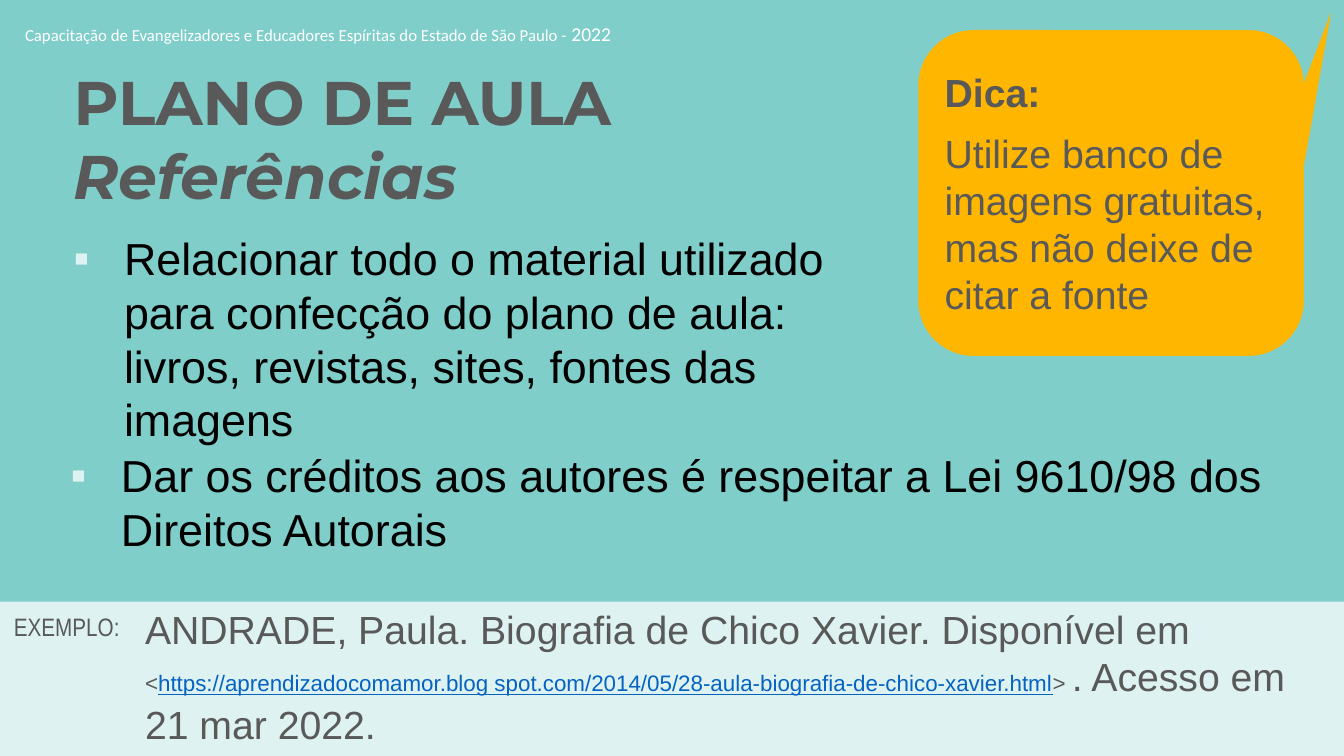
from lxml import etree
from pptx import Presentation
from pptx import util as u
from pptx.dml import color
from pptx.enum import shapes, text
from pptx.oxml import ns

TEAL, MINT, AMBER = "80CECA", "DEF2F1", "FFB600"
GRAY, BLACK, WHITE, LINK = "595959", "000000", "FFFFFF", "0563C1"


def rgb(value):
    return color.RGBColor.from_string(value)


class Slide:
    """Holds the style and the current slide."""

    def __init__(self, deck, layout, background):
        self.page = deck.slides.add_slide(deck.slide_layouts[layout])
        self.page.background.fill.solid()
        self.page.background.fill.fore_color.rgb = rgb(background)

    def place(self, box, left, top, width, height):
        box.left, box.top = u.Inches(left), u.Inches(top)
        box.width, box.height = u.Inches(width), u.Inches(height)

    def fill_text(self, box, paras, anchor=text.MSO_ANCHOR.TOP, wrap=True, gap=0):
        """Each paragraph is a list of (words, size, font, colour, styles)."""
        frame = box.text_frame
        frame.word_wrap = wrap
        frame.auto_size = text.MSO_AUTO_SIZE.NONE
        frame.vertical_anchor = anchor
        for number, spans in enumerate(paras):
            para = frame.add_paragraph() if number else frame.paragraphs[0]
            para.alignment = text.PP_ALIGN.LEFT
            para.space_before = u.Pt(gap if number else 0)
            for words, size, font, shade, styles in spans:
                span = para.add_run()
                span.text = words
                span.font.size = u.Pt(size)
                span.font.name = font
                span.font.color.rgb = rgb(shade)
                span.font.bold = "b" in styles
                span.font.italic = "i" in styles
                span.font.underline = "u" in styles

    def label(self, area, paras, **options):
        box = self.page.shapes.add_textbox(0, 0, 0, 0)
        self.place(box, *area)
        self.fill_text(box, paras, **options)

    def title(self, area, paras):
        box = self.page.shapes.title
        self.place(box, *area)
        self.fill_text(box, paras, anchor=text.MSO_ANCHOR.MIDDLE)

    def bullet(self, index, area, words):
        box = self.page.placeholders[index]
        self.place(box, *area)
        self.fill_text(box, [[(words, 32, "Arial", BLACK, "")]])
        props = box.text_frame.paragraphs[0]._p.get_or_add_pPr()
        props.set("marL", str(u.Inches(0.5)))
        props.set("indent", str(-u.Inches(0.5)))
        shade = etree.SubElement(props, ns.qn("a:buClr"))
        etree.SubElement(shade, ns.qn("a:srgbClr"), val=MINT)
        etree.SubElement(props, ns.qn("a:buFont"), typeface="Arial")
        etree.SubElement(props, ns.qn("a:buChar"), char="▪")

    def shape(self, kind, area, fill):
        shape = self.page.shapes.add_shape(kind, 0, 0, 0, 0)
        self.place(shape, *area)
        shape.shadow.inherit = False
        shape.fill.solid()
        shape.fill.fore_color.rgb = rgb(fill)
        shape.line.fill.background()
        return shape

    def callout(self, area, fill, adjustments, paras):
        kind = shapes.MSO_SHAPE.ROUNDED_RECTANGULAR_CALLOUT
        shape = self.shape(kind, area, fill)
        for number, value in enumerate(adjustments):
            shape.adjustments[number] = value
        shape.line.color.rgb = rgb(fill)
        shape.line.width = u.Pt(0.25)
        self.fill_text(shape, paras, anchor=text.MSO_ANCHOR.MIDDLE, gap=10)


def main():
    deck = Presentation()
    deck.slide_width, deck.slide_height = u.Inches(13.33), u.Inches(7.5)
    slide = Slide(deck, 3, TEAL)

    # Course header
    slide.label((0.15, 0.17, 6.83, 0.34), [[
        ("Capacitação de Evangelizadores e Educadores Espíritas do Estado de "
         "São Paulo - ", 12, "Calibri", WHITE, ""),
        ("2022", 14, "Calibri", WHITE, "")]])

    # Title and guidance
    slide.title((0.63, 0.39, 12.88, 1.95), [
        [("PLANO DE AULA", 44, "Montserrat", GRAY, "b")],
        [("Referências", 44, "Montserrat", GRAY, "bi")]])
    slide.bullet(1, (0.63, 2.24, 8.49, 2.26),
                 "Relacionar todo o material utilizado para confecção do plano "
                 "de aula: livros, revistas, sites, fontes das imagens")
    slide.bullet(2, (0.6, 4.39, 12.34, 1.18),
                 "Dar os créditos aos autores é respeitar a Lei 9610/98 dos "
                 "Direitos Autorais")

    # Tip
    slide.callout((9.11, 0.3, 3.82, 3.23), AMBER, (0.57, -0.55, 0.17), [
        [("Dica:", 28, "Arial", GRAY, "b")],
        [("Utilize banco de imagens gratuitas, mas não deixe de citar a fonte",
          28, "Arial", GRAY, "")]])

    # Example of a reference
    slide.shape(shapes.MSO_SHAPE.RECTANGLE, (0, 5.97, 13.33, 1.53), MINT)
    slide.label((0.04, 6.02, 1.26, 0.4),
                [[("EXEMPLO:", 18, "Arial Narrow", GRAY, "")]], wrap=False)
    slide.label((1.34, 5.96, 11.99, 1.51), [[
        ("ANDRADE, Paula. Biografia de Chico Xavier. Disponível em ",
         28, "Arial", GRAY, ""),
        ("<", 16, "Arial", GRAY, ""),
        ("https://aprendizadocomamor.blog spot.com/2014/05/"
         "28-aula-biografia-de-chico-xavier.html", 16, "Arial", LINK, "u"),
        ("> ", 16, "Arial", GRAY, ""),
        (". Acesso em 21 mar 2022.", 28, "Arial", GRAY, "")]])

    deck.save("out.pptx")


if __name__ == "__main__":
    main()
